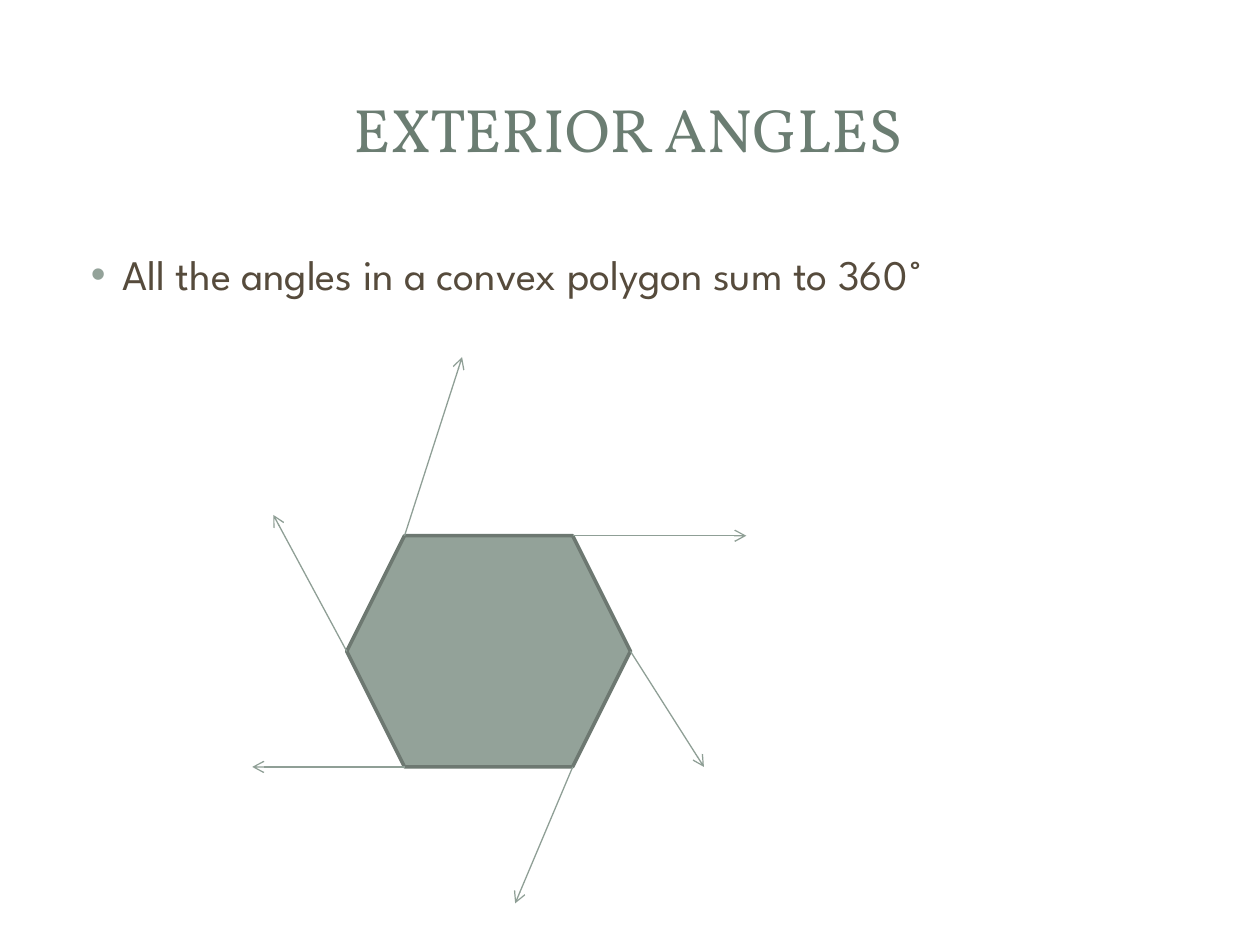
from dataclasses import dataclass

from lxml.etree import SubElement
from pptx import Presentation
from pptx.dml.color import RGBColor
from pptx.enum.shapes import MSO_CONNECTOR, MSO_SHAPE
from pptx.enum.text import MSO_ANCHOR, PP_ALIGN
from pptx.oxml.ns import qn
from pptx.util import Cm, Pt

TITLE = "EXTERIOR ANGLES"
BULLETS = ["All the angles in a convex polygon sum to 360˚"]

# Left, top, width, height in centimetres
TITLE_BOX = (1.19, 1.14, 22.94, 2.9)
BODY_BOX = (1.27, 4.88, 22.86, 12.14)
HEXAGON_BOX = (6.99, 10.8, 5.72, 4.66)
HEXAGON_INSET = 0.25  # corner inset as a share of the height

# Reach of each ray from its vertex, clockwise from the top right, in centimetres
RAYS = [(3.5, 0), (1.48, 2.33), (-1.16, 2.75),
        (-3.07, 0), (-1.48, -2.75), (1.16, -3.6)]


@dataclass(frozen=True)
class Theme:
    title_font: str = "Vollkorn"
    body_font: str = "League Spartan"
    title_size: float = 35
    body_size: float = 24
    title_color: str = "6B7D72"
    body_color: str = "564B3C"
    accent: str = "93A299"
    outline: str = "6D7871"
    ray: str = "8F9F96"


THEME = Theme()


def rgb(color):
    return RGBColor.from_string(color)


def place(shape, box):
    shape.left, shape.top, shape.width, shape.height = map(Cm, box)


def add_run(paragraph, text, font, size, color):
    run = paragraph.add_run()
    run.text = text
    run.font.name = font
    run.font.size = Pt(size)
    run.font.color.rgb = rgb(color)


def set_bullet(paragraph, color):
    properties = paragraph._p.get_or_add_pPr()
    properties.set("marL", str(Cm(0.95)))
    properties.set("indent", str(Cm(-0.64)))
    bullet_color = SubElement(properties, qn("a:buClr"))
    SubElement(bullet_color, qn("a:srgbClr"), val=color)
    SubElement(properties, qn("a:buFont"), typeface="Arial")
    SubElement(properties, qn("a:buChar"), char="•")


def add_title(slide):
    title = slide.shapes.title
    place(title, TITLE_BOX)
    title.text_frame.vertical_anchor = MSO_ANCHOR.MIDDLE
    paragraph = title.text_frame.paragraphs[0]
    paragraph.alignment = PP_ALIGN.CENTER
    add_run(paragraph, TITLE, THEME.title_font, THEME.title_size, THEME.title_color)


def add_bullets(slide):
    body = slide.placeholders[1]
    place(body, BODY_BOX)
    frame = body.text_frame
    for index, text in enumerate(BULLETS):
        paragraph = frame.add_paragraph() if index else frame.paragraphs[0]
        paragraph.space_before = Pt(0.2 * THEME.body_size)
        set_bullet(paragraph, THEME.accent)
        add_run(paragraph, text, THEME.body_font, THEME.body_size, THEME.body_color)


def add_hexagon(slide):
    hexagon = slide.shapes.add_shape(MSO_SHAPE.HEXAGON, *map(Cm, HEXAGON_BOX))
    hexagon.adjustments[0] = HEXAGON_INSET
    hexagon.shadow.inherit = False
    hexagon.fill.solid()
    hexagon.fill.fore_color.rgb = rgb(THEME.accent)
    hexagon.line.color.rgb = rgb(THEME.outline)
    hexagon.line.width = Pt(2)


def hexagon_vertices():
    """Return the six corners clockwise from the top right."""
    left, top, width, height = HEXAGON_BOX
    right, bottom, middle = left + width, top + height, top + height / 2
    inset = HEXAGON_INSET * height
    return [(right - inset, top), (right, middle), (right - inset, bottom),
            (left + inset, bottom), (left, middle), (left + inset, top)]


def add_ray(slide, start, reach):
    x, y = start
    dx, dy = reach
    ray = slide.shapes.add_connector(
        MSO_CONNECTOR.STRAIGHT, Cm(x), Cm(y), Cm(x + dx), Cm(y + dy))
    ray.line.color.rgb = rgb(THEME.ray)
    ray.line.width = Pt(0.75)
    SubElement(ray.line._get_or_add_ln(), qn("a:tailEnd"), type="arrow")
    SubElement(ray._element.spPr, qn("a:effectLst"))


def main():
    presentation = Presentation()
    presentation.slide_width, presentation.slide_height = Cm(25.4), Cm(19.05)
    slide = presentation.slides.add_slide(presentation.slide_layouts[1])
    add_title(slide)
    add_bullets(slide)
    add_hexagon(slide)
    for vertex, reach in zip(hexagon_vertices(), RAYS):
        add_ray(slide, vertex, reach)
    presentation.save("out.pptx")


if __name__ == "__main__":
    main()
